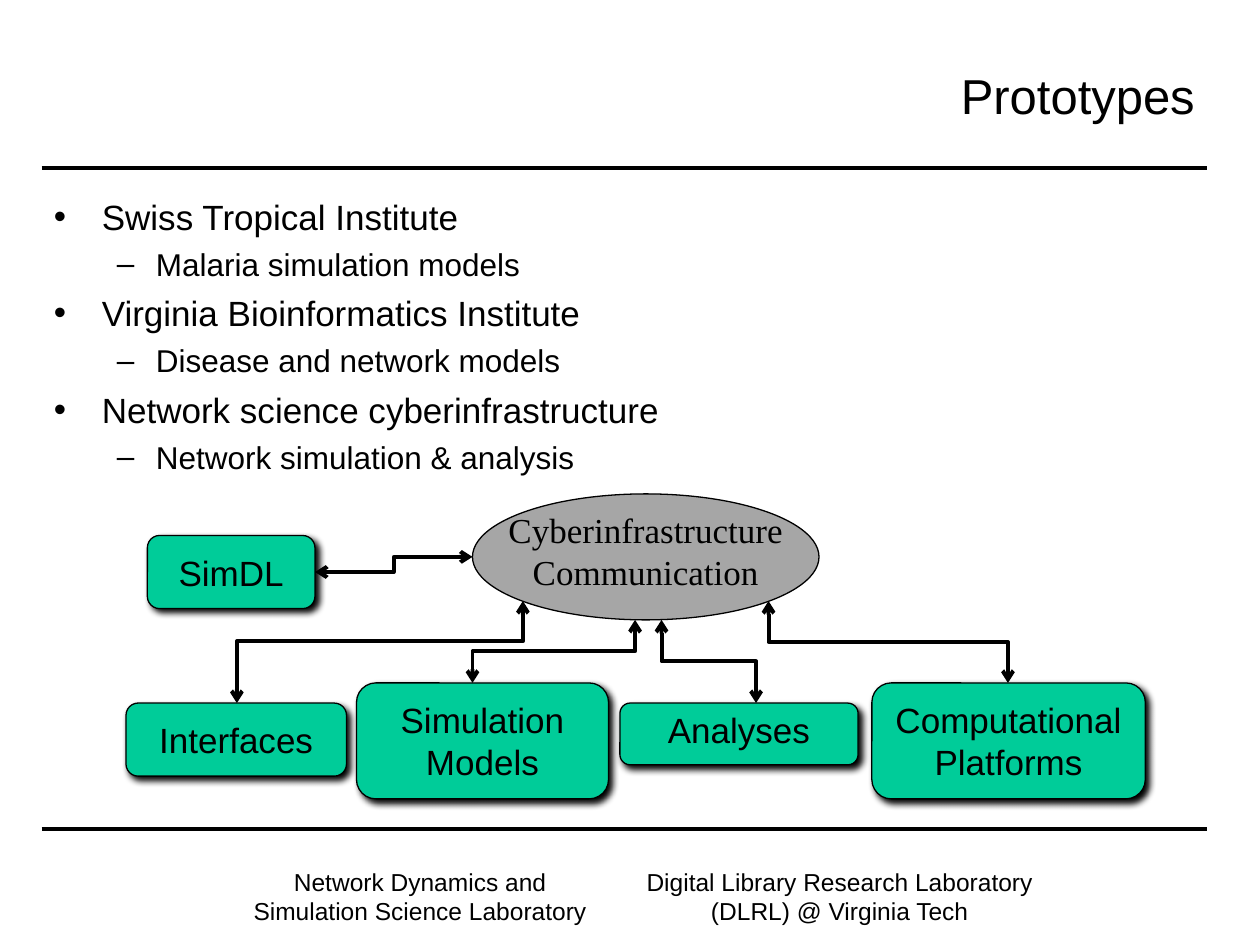
from lxml import etree
from pptx import Presentation
from pptx.dml.color import RGBColor
from pptx.enum.shapes import MSO_CONNECTOR as LINK, MSO_SHAPE as SHAPE
from pptx.enum.text import MSO_ANCHOR as ANCHOR, PP_ALIGN as ALIGN
from pptx.oxml.ns import qn
from pptx.util import Inches, Pt

COLORS = {"ink": "000000", "hub": "A6A6A6", "part": "00CC99"}
RGB = {name: RGBColor.from_string(code) for name, code in COLORS.items()}

prs = Presentation()
prs.slide_width, prs.slide_height = Inches(10), Inches(7.5)
slide = prs.slides.add_slide(prs.slide_layouts[6])
shapes = slide.shapes


def write(paragraph, text, size, align, font="Arial"):
    paragraph.alignment = align
    for i, line in enumerate(text.split("\n")):
        if i:
            paragraph.add_line_break()
        run = paragraph.add_run()
        run.text = line
        run.font.size, run.font.name = Pt(size), font
        run.font.color.rgb = RGB["ink"]


def connect(kind, x1, y1, x2, y2):
    """Add a black line without shadow; return it and its a:ln element."""
    link = shapes.add_connector(kind, *map(Inches, (x1, y1, x2, y2)))
    link.line.color.rgb = RGB["ink"]
    link.line.width = Pt(2.25)
    properties = link._element.spPr
    etree.SubElement(properties, qn("a:effectLst"))
    return link, properties.find(qn("a:ln"))


# Rules above and below the content
for y in (1.33, 6.58):
    connect(LINK.STRAIGHT, 0.33, y, 9.58, y)

# Title and footer
captions = [
    ("Prototypes", 28, ALIGN.RIGHT, ANCHOR.MIDDLE, (0.33, 0.25, 9.25, 1)),
    ("Network Dynamics and\nSimulation Science Laboratory", 14, ALIGN.CENTER, ANCHOR.TOP,
     (1.75, 6.83, 3.17, 0.58)),
    ("Digital Library Research Laboratory (DLRL) @ Virginia Tech", 14, ALIGN.CENTER, ANCHOR.TOP,
     (5, 6.83, 3.33, 0.58)),
]
for text, size, align, anchor, place in captions:
    frame = shapes.add_textbox(*map(Inches, place)).text_frame
    frame.word_wrap, frame.vertical_anchor = True, anchor
    write(frame.paragraphs[0], text, size, align)

# Partners and their models
partners = [
    ("Swiss Tropical Institute", "Malaria simulation models"),
    ("Virginia Bioinformatics Institute", "Disease and network models"),
    ("Network science cyberinfrastructure", "Network simulation & analysis"),
]
LEVELS = [("•", 20, 0.38, 0.38, 5), ("–", 18, 0.81, 0.31, 4.5)]
frame = shapes.add_textbox(*map(Inches, (0.33, 1.5, 5, 4.5))).text_frame
frame.word_wrap, frame.margin_right = True, 0
for row, partner in enumerate(partners):
    for level, text in enumerate(partner):
        first = row == level == 0
        paragraph = frame.paragraphs[0] if first else frame.add_paragraph()
        mark, size, margin, hanging, gap = LEVELS[level]
        paragraph.level = level
        if not first:
            paragraph.space_before = Pt(gap)
        props = paragraph._p.get_or_add_pPr()
        props.set("marL", str(Inches(margin)))
        props.set("indent", str(-Inches(hanging)))
        etree.SubElement(props, qn("a:buFont"), typeface="Arial")
        etree.SubElement(props, qn("a:buChar"), char=mark)
        write(paragraph, text, size, ALIGN.LEFT)

# Hub and parts: lines of text, place, lift of the text above the middle
HUB = "Cyberinfrastructure"
nodes = [
    ([HUB, "Communication"], (3.75, 3.92, 2.75, 1), 0.1),
    (["SimDL"], (1.17, 4.25, 1.33, 0.58), 0),
    (["Interfaces"], (1, 5.58, 1.75, 0.58), 0),
    (["Simulation", "Models"], (2.83, 5.42, 2, 0.92), 0),
    (["Analyses"], (4.92, 5.58, 1.89, 0.49), 0.07),
    (["Computational", "Platforms"], (6.92, 5.42, 2.17, 0.92), 0),
]
for lines, place, lift in nodes:
    is_hub = lines[0] == HUB
    outline = SHAPE.OVAL if is_hub else SHAPE.ROUNDED_RECTANGLE
    node = shapes.add_shape(outline, *map(Inches, place))
    node.fill.solid()
    node.fill.fore_color.rgb = RGB["hub" if is_hub else "part"]
    node.line.color.rgb, node.line.width = RGB["ink"], Pt(0.75)
    node.shadow.inherit = False
    if not is_hub:
        effects = node._element.spPr.find(qn("a:effectLst"))
        shadow = etree.SubElement(effects, qn("a:outerShdw"), blurRad=str(Pt(4)), dist=str(Pt(3)),
                                  dir=str(45 * 60000), algn="ctr", rotWithShape="0")
        shade = etree.SubElement(shadow, qn("a:srgbClr"), val=COLORS["ink"])
        etree.SubElement(shade, qn("a:alpha"), val="99000")
    frame = node.text_frame
    frame.word_wrap, frame.vertical_anchor = False, ANCHOR.MIDDLE
    frame.margin_top, frame.margin_bottom = 0, Inches(lift)
    for i, line in enumerate(lines):
        paragraph = frame.add_paragraph() if i else frame.paragraphs[0]
        write(paragraph, line, 20, ALIGN.CENTER, "Times New Roman" if is_hub else "Arial")

# Two-way links; those down from the hub are turned to leave vertically
links = [
    (2.5, 4.54, 3.75, 4.42, 0.5, False),
    (4.15, 4.77, 1.88, 5.58, 0.394, True),
    (5.04, 4.92, 3.75, 5.42, 0.5, True),
    (5.25, 4.92, 6, 5.58, 0.5, True),
    (6.1, 4.77, 8, 5.42, 0.5, True),
]
for x1, y1, x2, y2, bend, turned in links:
    side = 1 if x2 < x1 else -1
    if turned:
        mid_x, mid_y = (x1 + x2) / 2, (y1 + y2) / 2
        half_x, half_y = (y2 - y1) / 2, abs(x2 - x1) / 2
        x1, x2 = mid_x - side * half_x, mid_x + side * half_x
        y1, y2 = mid_y - half_y, mid_y + half_y
    link, stroke = connect(LINK.ELBOW, x1, y1, x2, y2)
    properties = link._element.spPr
    if turned:
        properties.find(qn("a:xfrm")).set("rot", str((180 - 90 * side) * 60000))
    guides = properties.find(qn("a:prstGeom")).find(qn("a:avLst"))
    etree.SubElement(guides, qn("a:gd"), name="adj1", fmla=f"val {round(bend * 100000)}")
    for end in ("a:headEnd", "a:tailEnd"):
        etree.SubElement(stroke, qn(end), type="arrow")

prs.save("out.pptx")
